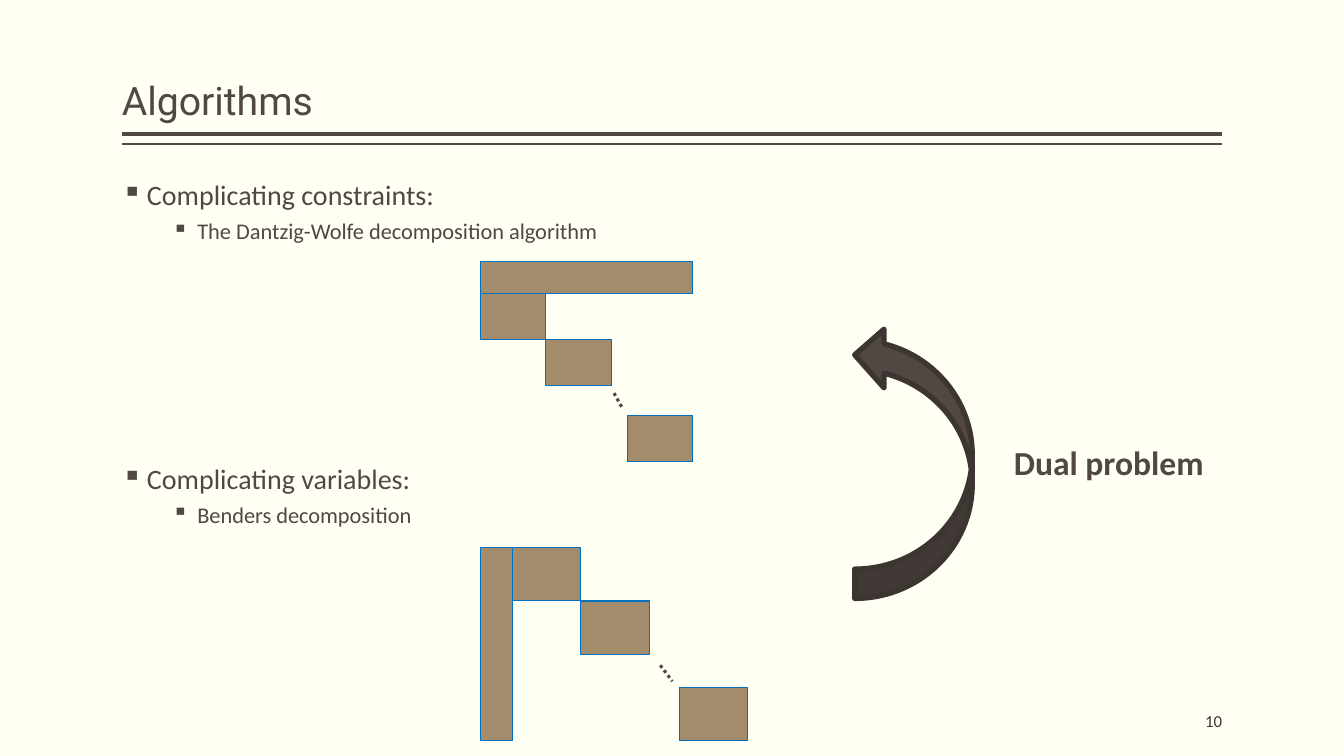
from dataclasses import dataclass

from lxml.etree import SubElement
from pptx import Presentation
from pptx.dml.color import RGBColor
from pptx.enum.dml import MSO_LINE
from pptx.enum.shapes import MSO_CONNECTOR, MSO_SHAPE
from pptx.enum.text import MSO_ANCHOR, MSO_AUTO_SIZE, PP_ALIGN
from pptx.oxml.ns import qn
from pptx.shapes.autoshape import Shape
from pptx.shapes.connector import Connector
from pptx.slide import Slide
from pptx.text.text import TextFrame, _Paragraph
from pptx.util import Emu, Inches, Pt

COLUMNS, ROWS = 160, 90
SLIDE_WIDTH, SLIDE_HEIGHT = Emu(12192000), Emu(6858000)
LEFT, RIGHT = 14.5, 145.5

IVORY = RGBColor(0xFF, 0xFF, 0xF3)
BROWN = RGBColor(0x51, 0x48, 0x43)
DARK_BROWN = RGBColor(0x3C, 0x35, 0x32)
NUMBER_BROWN = RGBColor(0x3D, 0x36, 0x32)
TAN = RGBColor(0xA2, 0x8C, 0x6C)
BLUE = RGBColor(0x00, 0x70, 0xC0)


@dataclass(frozen=True)
class Box:
    column: float
    row: float
    columns: float
    rows: float

    def lengths(self) -> tuple[Emu, Emu, Emu, Emu]:
        return across(self.column), down(self.row), across(self.columns), down(self.rows)


@dataclass(frozen=True)
class Line:
    start: tuple[float, float]
    end: tuple[float, float]
    weight: float
    dotted: bool = False


@dataclass(frozen=True)
class Topic:
    row: float
    heading: str
    method: str


@dataclass(frozen=True)
class BlockMatrix:
    coupling: Box
    first: Box
    last: tuple[float, float]
    dots: Line


RULES = [Line((LEFT, 16), (RIGHT, 16), 3), Line((LEFT, 17.15), (RIGHT, 17.15), 1)]
TOPICS = [
    Topic(21, "Complicating constraints:", "The Dantzig-Wolfe decomposition algorithm"),
    Topic(54.8, "Complicating variables:", "Benders decomposition"),
]
MATRICES = [
    BlockMatrix(Box(57.25, 65.2, 3.75, 23), Box(61, 65.2, 8.15, 6.35), (80.9, 81.85),
                Line((78.6, 79.2), (80.05, 81.1), 2.25, True)),
    BlockMatrix(Box(57.15, 31.1, 25.35, 3.8), Box(57.15, 34.9, 7.8, 5.5), (74.7, 49.5),
                Line((73.1, 46.8), (74.15, 48.7), 2.25, True)),
]


def across(columns: float) -> Emu:
    return Emu(round(SLIDE_WIDTH * columns / COLUMNS))


def down(rows: float) -> Emu:
    return Emu(round(SLIDE_HEIGHT * rows / ROWS))


def place(shape: Shape, box: Box) -> None:
    shape.left, shape.top, shape.width, shape.height = box.lengths()


def set_frame(frame: TextFrame, anchor: MSO_ANCHOR) -> None:
    frame.word_wrap = True
    frame.auto_size = MSO_AUTO_SIZE.NONE
    frame.vertical_anchor = anchor
    frame.margin_left = frame.margin_right = 0
    frame.margin_top = frame.margin_bottom = Inches(0.05)


def set_font(paragraph: _Paragraph, size: float, name: str = "Calibri",
             color: RGBColor = BROWN, bold: bool = False) -> None:
    paragraph.font.size = Pt(size)
    paragraph.font.name = name
    paragraph.font.bold = bold
    paragraph.font.color.rgb = color


def add_text(slide: Slide, box: Box, anchor: MSO_ANCHOR) -> TextFrame:
    frame = slide.shapes.add_textbox(*box.lengths()).text_frame
    set_frame(frame, anchor)
    return frame


def add_line(slide: Slide, line: Line) -> Connector:
    (start_column, start_row), (end_column, end_row) = line.start, line.end
    connector = slide.shapes.add_connector(
        MSO_CONNECTOR.STRAIGHT, across(start_column), down(start_row),
        across(end_column), down(end_row))
    connector.line.color.rgb = BROWN
    connector.line.width = Pt(line.weight)
    if line.dotted:
        connector.line.dash_style = MSO_LINE.ROUND_DOT
    SubElement(connector._element.spPr, qn("a:effectLst"))
    return connector


def add_filled(slide: Slide, kind: MSO_SHAPE, box: Box, fill: RGBColor,
               outline: RGBColor, weight: float) -> Shape:
    shape = slide.shapes.add_shape(kind, *box.lengths())
    shape.shadow.inherit = False
    shape.fill.solid()
    shape.fill.fore_color.rgb = fill
    shape.line.color.rgb = outline
    shape.line.width = Pt(weight)
    return shape


def format_bullet(paragraph: _Paragraph, text: str, indent: float, size: float) -> None:
    paragraph.text = text
    paragraph.line_spacing = 0.9
    properties = paragraph._p.get_or_add_pPr()
    properties.set("marL", str(Inches(indent)))
    properties.set("indent", str(-Inches(0.25)))
    SubElement(properties, qn("a:buChar")).set("char", "▪")
    set_font(paragraph, size)


def add_topic(slide: Slide, topic: Topic) -> None:
    frame = add_text(slide, Box(LEFT, topic.row, RIGHT - LEFT, 8), MSO_ANCHOR.TOP)
    format_bullet(frame.paragraphs[0], topic.heading, 0.25, 20)
    method = frame.add_paragraph()
    method.level = 1
    method.space_before = Pt(6)
    format_bullet(method, topic.method, 0.75, 16)


def add_matrix(slide: Slide, matrix: BlockMatrix) -> None:
    first = matrix.first
    second = Box(first.column + first.columns, first.row + first.rows, first.columns, first.rows)
    last = Box(*matrix.last, first.columns, first.rows)
    for box in (matrix.coupling, first, second, last):
        add_filled(slide, MSO_SHAPE.RECTANGLE, box, TAN, BLUE, 0.75)
    add_line(slide, matrix.dots)


def add_title(slide: Slide) -> None:
    title = slide.shapes.title
    place(title, Box(LEFT, 1, RIGHT - LEFT, 14.4))
    set_frame(title.text_frame, MSO_ANCHOR.BOTTOM)
    paragraph = title.text_frame.paragraphs[0]
    paragraph.text = "Algorithms"
    paragraph.alignment = PP_ALIGN.LEFT
    paragraph.line_spacing = 0.9
    set_font(paragraph, 28, "Roboto")


def add_dual_arrow(slide: Slide) -> None:
    arrow = add_filled(slide, MSO_SHAPE.CURVED_LEFT_ARROW, Box(101.75, 38.75, 14, 32.5),
                       BROWN, DARK_BROWN, 3.78)
    arrow._element.spPr.find(qn("a:xfrm")).set("flipV", "1")
    label = add_text(slide, Box(118.5, 52, 27, 6), MSO_ANCHOR.TOP)
    label.word_wrap = False
    paragraph = label.paragraphs[0]
    paragraph.text = "Dual problem"
    paragraph.alignment = PP_ALIGN.CENTER
    set_font(paragraph, 24, bold=True)


def add_slide_number(slide: Slide) -> None:
    paragraph = add_text(slide, Box(121.5, 83.4, 24, 4.8), MSO_ANCHOR.MIDDLE).paragraphs[0]
    paragraph.text = "10"
    paragraph.alignment = PP_ALIGN.RIGHT
    set_font(paragraph, 12, color=NUMBER_BROWN)


def main() -> None:
    presentation = Presentation()
    presentation.slide_width, presentation.slide_height = SLIDE_WIDTH, SLIDE_HEIGHT
    slide = presentation.slides.add_slide(presentation.slide_layouts.get_by_name("Title Only"))
    slide.background.fill.solid()
    slide.background.fill.fore_color.rgb = IVORY
    for rule in RULES:
        add_line(slide, rule)
    add_title(slide)
    for topic in TOPICS:
        add_topic(slide, topic)
    add_dual_arrow(slide)
    for matrix in MATRICES:
        add_matrix(slide, matrix)
    add_slide_number(slide)
    presentation.save("out.pptx")


if __name__ == "__main__":
    main()
